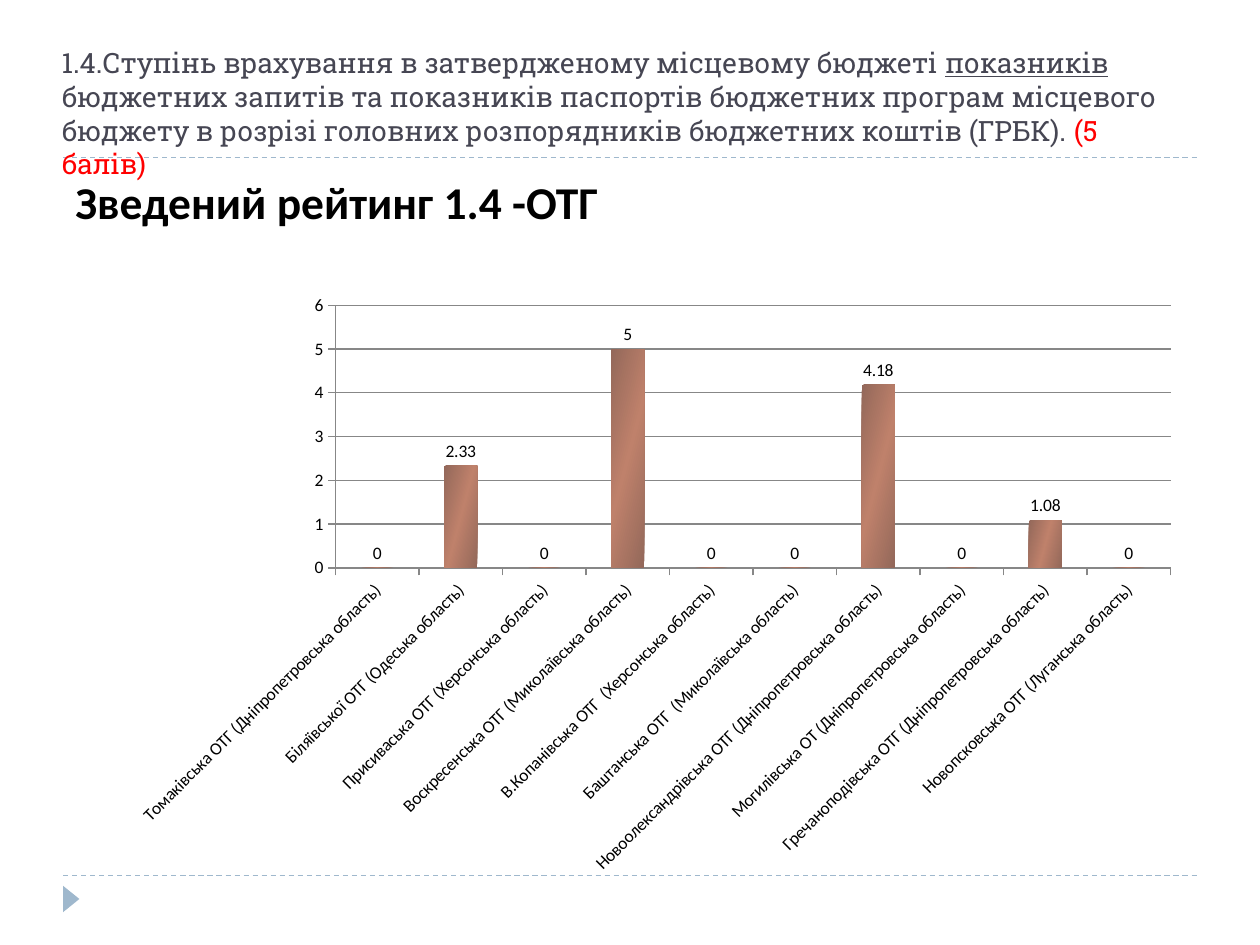
import copy
from dataclasses import dataclass

import pptx
import pptx.chart.data
import pptx.dml.color
import pptx.enum.chart
import pptx.enum.dml
import pptx.enum.shapes
import pptx.enum.text
import pptx.oxml.xmlchemy
import pptx.util
from pptx.util import Inches

rgb = pptx.dml.color.RGBColor.from_string


@dataclass(frozen=True)
class Theme:
    title_font: str = "Roboto Slab"
    body_font: str = "Calibri"
    title_size: int = 16
    heading_size: int = 26
    chart_size: int = 10
    title: str = "464653"
    accent: str = "FF0000"
    text: str = "000000"
    rule: str = "9FB8CD"
    axis: str = "878787"
    bar_dark: str = "93685A"
    bar_light: str = "BF816B"


THEME = Theme()

TITLE_RUNS = [
    ("1.4.Ступінь врахування в затвердженому місцевому бюджеті ", THEME.title, False),
    ("показників ", THEME.title, True),
    ("бюджетних запитів та показників паспортів бюджетних програм місцевого "
     "бюджету в розрізі головних розпорядників бюджетних коштів (ГРБК). ", THEME.title, False),
    ("(5 балів)", THEME.accent, False),
]

RATING = [
    ("Томаківська ОТГ (Дніпропетровська область)", 0),
    ("Біляївської ОТГ (Одеська область)", 2.33),
    (" Присиваська ОТГ (Херсонська область)", 0),
    (" Воскресенська ОТГ (Миколаївська область)", 5),
    ("В.Копанівська ОТГ  (Херсонська область)", 0),
    ("Баштанська ОТГ  (Миколаївська область)", 0),
    ("Новоолександрівська ОТГ (Дніпропетровська область)", 4.18),
    ("Могилівська ОТ (Дніпропетровська область)", 0),
    ("Гречаноподівська ОТГ (Дніпропетровська область)", 1.08),
    ("Новопсковська ОТГ (Луганська область)", 0),
]


def add_frame(s, left, top, width, height):
    """Add the two dashed rules on the box's edges and the marker below it."""
    for y in (top, top + height):
        line = s.shapes.add_connector(pptx.enum.shapes.MSO_CONNECTOR.STRAIGHT,
                                      left, y, left + width, y)
        line.line.color.rgb = rgb(THEME.rule)
        line.line.width = pptx.util.Pt(0.75)
        line.line.dash_style = pptx.enum.dml.MSO_LINE.DASH
        line._element.spPr.append(pptx.oxml.xmlchemy.OxmlElement("a:effectLst"))

    sp = s.shapes.add_shape(pptx.enum.shapes.MSO_SHAPE.ISOSCELES_TRIANGLE,
                            left - Inches(0.04), top + height + Inches(0.12),
                            Inches(0.21), Inches(0.13))
    sp.rotation = 90
    sp.shadow.inherit = False
    sp.fill.solid()
    sp.fill.fore_color.rgb = rgb(THEME.rule)
    sp.line.fill.background()


def add_text_frame(s, box):
    tf = s.shapes.add_textbox(*box).text_frame
    tf.word_wrap = True
    return tf


def add_title(s, *box):
    tf = add_text_frame(s, box)
    tf.vertical_anchor = pptx.enum.text.MSO_ANCHOR.BOTTOM
    p = tf.paragraphs[0]
    p.font.name = THEME.title_font
    p.font.size = pptx.util.Pt(THEME.title_size)
    for text, color, underline in TITLE_RUNS:
        r = p.add_run()
        r.text = text
        r.font.color.rgb = rgb(color)
        if underline:
            r.font.underline = True


def add_heading(s, *box):
    p = add_text_frame(s, box).paragraphs[0]
    p.text = "Зведений рейтинг 1.4 -ОТГ"
    p.space_before = pptx.util.Pt(6)
    p.font.name = THEME.body_font
    p.font.size = pptx.util.Pt(THEME.heading_size)
    p.font.bold = True
    p.font.color.rgb = rgb(THEME.text)


def shade_bars(fill):
    """Give the bars a gradient that is dark at both edges and light between."""
    fill.gradient()
    fill.gradient_angle = 345
    first, last = fill.gradient_stops
    for stop, color, position in ((first, THEME.bar_dark, 0), (last, THEME.bar_light, 0.5)):
        stop.color.rgb = rgb(color)
        stop.position = position
    edge = copy.deepcopy(first._gs)
    edge.set("pos", "100000")
    last._gs.addnext(edge)


def add_rating_chart(s, *box):
    data = pptx.chart.data.CategoryChartData()
    data.categories = [name for name, _ in RATING]
    data.add_series("Series 1", [value for _, value in RATING])
    chart = s.shapes.add_chart(pptx.enum.chart.XL_CHART_TYPE.COLUMN_CLUSTERED,
                               *box, data).chart
    chart.has_legend = False
    chart.has_title = False
    chart.font.name = THEME.body_font
    chart.font.size = pptx.util.Pt(THEME.chart_size)
    chart.font.color.rgb = rgb(THEME.text)

    values, names = chart.value_axis, chart.category_axis
    values.minimum_scale, values.maximum_scale, values.major_unit = 0, 6, 1
    values.has_major_gridlines = True
    for part in (values, names, values.major_gridlines):
        part.format.line.color.rgb = rgb(THEME.axis)
        part.format.line.width = pptx.util.Pt(0.75)
    for axis in (values, names):
        axis.major_tick_mark = pptx.enum.chart.XL_TICK_MARK.OUTSIDE
    names.tick_labels.font.size = pptx.util.Pt(THEME.chart_size)
    names._element.txPr.bodyPr.set("rot", "-2700000")

    plot = chart.plots[0]
    plot.gap_width = 150
    plot.vary_by_categories = False
    plot.has_data_labels = True
    plot.data_labels.show_value = True
    plot.data_labels.position = pptx.enum.chart.XL_LABEL_POSITION.OUTSIDE_END
    shade_bars(plot.series[0].format.fill)


def main():
    prs = pptx.Presentation()
    prs.slide_width, prs.slide_height = Inches(10), Inches(7.5)
    s = prs.slides.add_slide(prs.slide_layouts[6])
    add_frame(s, Inches(0.5), Inches(1.25), Inches(9), Inches(5.7))
    add_title(s, Inches(0.39), Inches(0.23), Inches(9), Inches(1.25))
    add_heading(s, Inches(0.5), Inches(1.33), Inches(9), Inches(5.4))
    add_rating_chart(s, Inches(0.94), Inches(2.25), Inches(8.52), Inches(4.78))
    prs.save("out.pptx")


if __name__ == "__main__":
    main()
